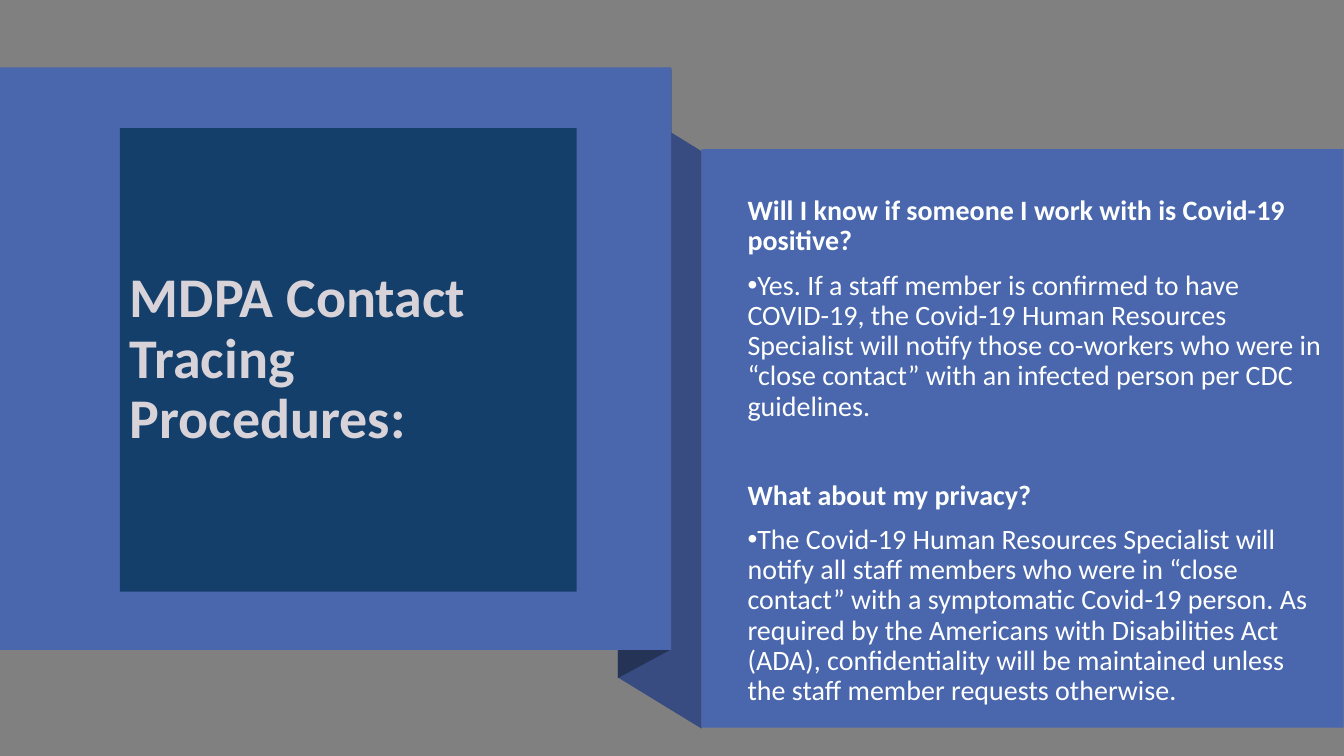
from pptx import Presentation
from pptx import util as u
from pptx.dml.color import RGBColor
from pptx.enum import shapes, text
from pptx.oxml.ns import qn
from lxml import etree

COLORS = {
    "background": "808080",
    "panel": "4A66AC",
    "fold": "384C81",
    "fold_dark": "253356",
    "title_box": "143F6A",
    "title_text": "D8D3D9",
    "body_text": "FEFFFF",
}


def paint(sp, color):
    sp.fill.solid()
    sp.fill.fore_color.rgb = RGBColor.from_string(COLORS[color])
    sp.line.fill.background()


def add_run(p, words, size, color, bold):
    r = p.add_run()
    r.text = words
    r.font.name = "Calibri"
    r.font.size = u.Pt(size)
    r.font.bold = bold
    r.font.color.rgb = RGBColor.from_string(COLORS[color])


prs = Presentation()
prs.slide_width, prs.slide_height = u.Cm(33.87), u.Cm(19.05)
s = prs.slides.add_slide(prs.slide_layouts[5])
s.background.fill.solid()
s.background.fill.fore_color.rgb = RGBColor.from_string(COLORS["background"])

# Ribbon folds between the panels
folds = [
    ("fold", [(17.68, 18.36), (15.57, 17.07), (15.57, 2.51), (17.68, 3.81)]),
    ("fold_dark", [(16.92, 16.36), (15.57, 17.09), (15.57, 2.49), (16.92, 1.75)]),
]
for color, corners in folds:
    points = [(u.Cm(x), u.Cm(y)) for x, y in corners]
    outline = s.shapes.build_freeform(*points[0])
    outline.add_line_segments(points[1:], close=True)
    sp = outline.convert_to_shape()
    sp.shadow.inherit = False
    paint(sp, color)

# Left and right panels
for box in [(0, 1.7, 16.92, 14.68), (17.68, 3.76, 16.18, 14.58)]:
    sp = s.shapes.add_shape(shapes.MSO_SHAPE.RECTANGLE, *map(u.Cm, box))
    sp.shadow.inherit = False
    paint(sp, "panel")

# Title, brought in front of the left panel
title = s.shapes.title
s.shapes._spTree.append(title._element)
title.left, title.top, title.width, title.height = map(u.Cm, (3.02, 3.23, 11.51, 11.68))
paint(title, "title_box")
tf = title.text_frame
tf.word_wrap = True
tf.auto_size = text.MSO_AUTO_SIZE.NONE
tf.vertical_anchor = text.MSO_ANCHOR.MIDDLE
p = tf.paragraphs[0]
p.alignment = text.PP_ALIGN.LEFT
p.line_spacing = 0.9
add_run(p, "MDPA Contact Tracing Procedures:", 40, "title_text", True)

# Questions and answers: words, is a question, space before
entries = [
    ("Will I know if someone I work with is Covid-19 positive?", True, 10),
    ("Yes. If a staff member is confirmed to have COVID-19, the Covid-19 Human "
     "Resources Specialist will notify those co-workers who were in “close contact” "
     "with an infected person per CDC guidelines.", False, 10),
    ("What about my privacy?", True, 42),
    ("The Covid-19 Human Resources Specialist will notify all staff members who were "
     "in “close contact” with a symptomatic Covid-19 person. As required by the "
     "Americans with Disabilities Act (ADA), confidentiality will be maintained unless "
     "the staff member requests otherwise.", False, 10),
]
body = s.shapes.add_textbox(*map(u.Cm, (18.59, 4.7, 15.04, 13.36)))
tf = body.text_frame
tf.word_wrap = True
tf.vertical_anchor = text.MSO_ANCHOR.MIDDLE
for i, (words, question, space) in enumerate(entries):
    p = tf.add_paragraph() if i else tf.paragraphs[0]
    p.line_spacing = 0.9
    p.space_before = u.Pt(space)
    add_run(p, words, 20, "body_text", question)
    if not question:
        pPr = p._p.get_or_add_pPr()
        pPr.set("marL", "0")
        pPr.set("indent", str(-u.Cm(0.64)))
        etree.SubElement(pPr, qn("a:buFont")).set("typeface", "Arial")
        etree.SubElement(pPr, qn("a:buChar")).set("char", "•")

prs.save("out.pptx")
